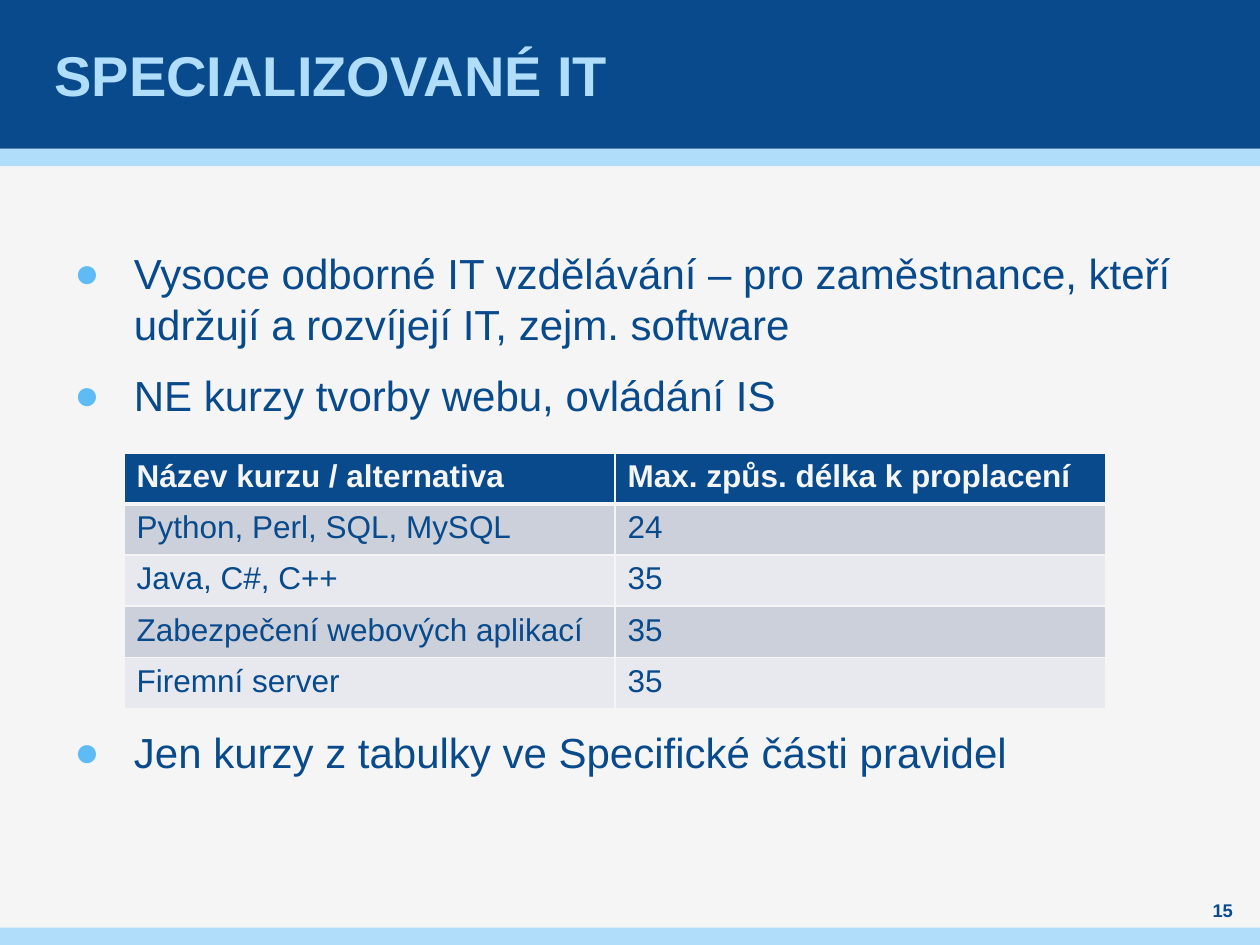
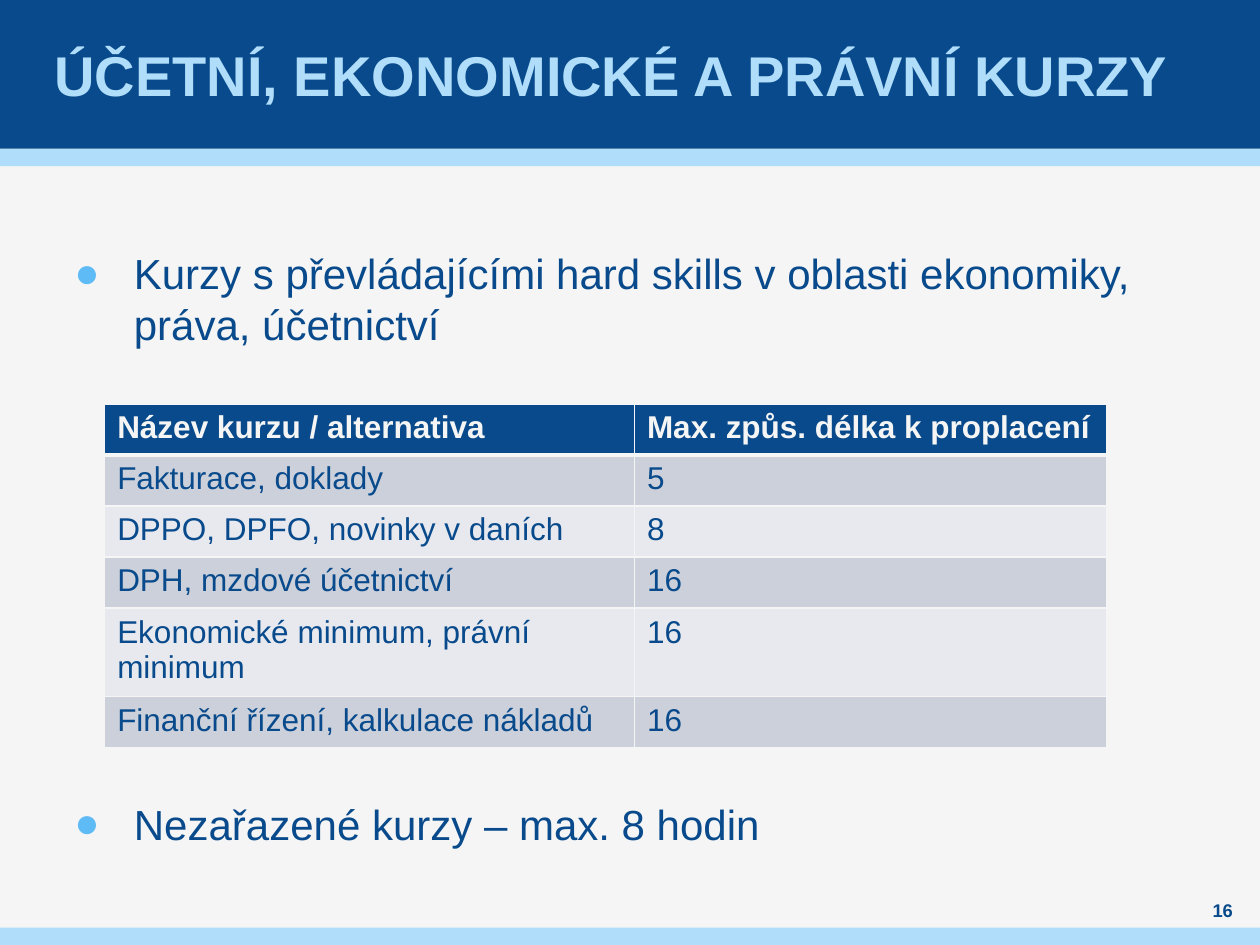
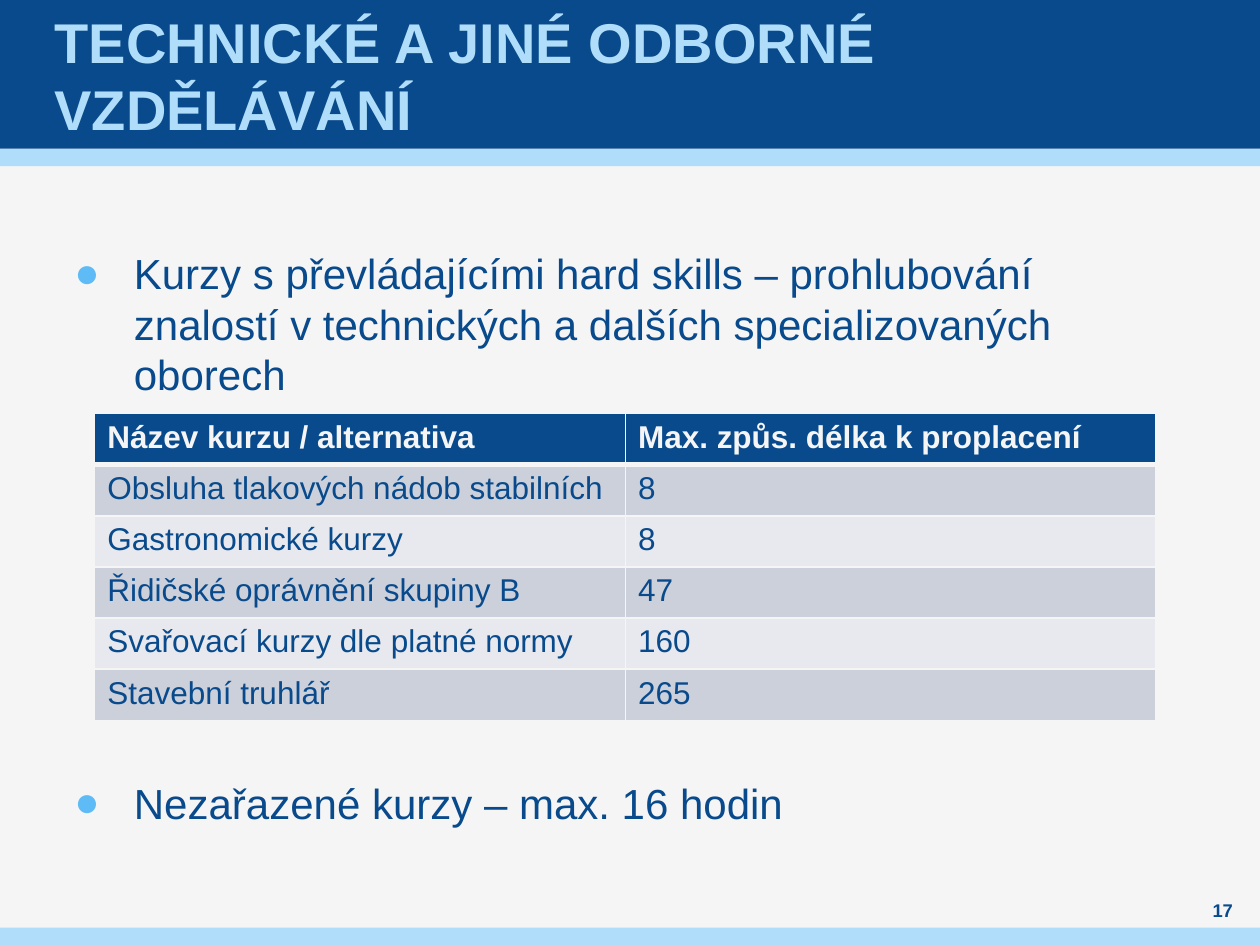
"""Builds three slides on subsidised courses, each with bullets and a table of limits."""
from dataclasses import dataclass
from typing import NamedTuple

from lxml import etree
from pptx import Presentation
from pptx import util as u
from pptx.dml.color import RGBColor
from pptx.enum import shapes, text
from pptx.oxml import ns


@dataclass(frozen=True)
class Theme:
    navy: str = "084A8B"
    sky: str = "AFDDFA"
    bullet: str = "5FBBF5"
    paper: str = "F5F5F5"
    stripes: tuple[str, str] = ("CCD0DA", "E7E9EE")
    font: str = "Arial"
    title_size: float = 32
    body_size: float = 24
    table_size: float = 18
    number_size: float = 10.5
    line_spacing: float = 28.8
    space: float = 6
    thin: float = 1
    thick: float = 3


class Box(NamedTuple):
    left: float
    top: float
    width: float
    height: float

    def lengths(self) -> list[u.Cm]:
        return [u.Cm(side) for side in self]


class Band(NamedTuple):
    box: Box
    color: str


@dataclass(frozen=True)
class Limits:
    left: float
    top: float
    columns: tuple[float, float]
    courses: tuple[tuple[str, str], ...]


@dataclass(frozen=True)
class CoursePage:
    number: int
    title: str
    intro: tuple[str, ...]
    limits: Limits
    closing: str
    lines_between: int


THEME = Theme()
PAGE_WIDTH, PAGE_HEIGHT = 25.4, 19.05
HEADER, STRIP = 3.0, 0.35
ROW_HEIGHT = 1.03
INDENT = 1.2
TITLE_BOX = Box(1, 0, 23.4, HEADER)
BODY_BOX = Box(1.5, 5, 22.4, 12)
NUMBER_BOX = Box(24, 18.1, 1.3, 0.5)
BANDS = (
    Band(Box(0, HEADER, PAGE_WIDTH, STRIP), THEME.sky),
    Band(Box(0, 0, PAGE_WIDTH, HEADER), THEME.navy),
    Band(Box(0, PAGE_HEIGHT - STRIP, PAGE_WIDTH, STRIP), THEME.sky),
)
HEADINGS = ("Název kurzu / alternativa", "Max. způs. délka k proplacení")

PAGES = (
    CoursePage(
        15,
        "SPECIALIZOVANÉ IT",
        (
            "Vysoce odborné IT vzdělávání – pro zaměstnance, kteří udržují a rozvíjejí IT, zejm. software",
            "NE kurzy tvorby webu, ovládání IS",
        ),
        Limits(2.5, 9.13, (9.9, 9.9), (
            ("Python, Perl, SQL, MySQL", "24"),
            ("Java, C#, C++", "35"),
            ("Zabezpečení webových aplikací", "35"),
            ("Firemní server", "35"),
        )),
        "Jen kurzy z tabulky ve Specifické části pravidel",
        4,
    ),
    CoursePage(
        16,
        "ÚČETNÍ, EKONOMICKÉ A PRÁVNÍ KURZY",
        ("Kurzy s převládajícími hard skills v oblasti ekonomiky, práva, účetnictví",),
        Limits(2.11, 8.14, (10.68, 9.52), (
            ("Fakturace, doklady", "5"),
            ("DPPO, DPFO, novinky v daních", "8"),
            ("DPH, mzdové účetnictví", "16"),
            ("Ekonomické minimum, právní minimum", "16"),
            ("Finanční řízení, kalkulace nákladů", "16"),
        )),
        "Nezařazené kurzy – max. 8 hodin",
        6,
    ),
    CoursePage(
        17,
        "TECHNICKÉ A JINÉ ODBORNÉ VZDĚLÁVÁNÍ",
        ("Kurzy s převládajícími hard skills – prohlubování znalostí v technických a dalších specializovaných oborech",),
        Limits(1.91, 8.34, (10.7, 10.7), (
            ("Obsluha tlakových nádob stabilních", "8"),
            ("Gastronomické kurzy", "8"),
            ("Řidičské oprávnění skupiny B", "47"),
            ("Svařovací kurzy dle platné normy", "160"),
            ("Stavební truhlář", "265"),
        )),
        "Nezařazené kurzy – max. 16 hodin",
        5,
    ),
)


def rgb(color: str) -> RGBColor:
    return RGBColor.from_string(color)


def add_child(parent, tag: str, **attributes: str):
    return etree.SubElement(parent, ns.qn(tag), attributes)


def style(paragraph, size: float, color: str, bold: bool = False) -> None:
    font = paragraph.font
    font.name, font.size, font.bold = THEME.font, u.Pt(size), bold
    font.color.rgb = rgb(color)


def add_frame(slide, box: Box, side_inset: float = 0, anchor=text.MSO_ANCHOR.MIDDLE):
    frame = slide.shapes.add_textbox(*box.lengths()).text_frame
    frame.word_wrap = True
    frame.vertical_anchor = anchor
    frame.margin_top = frame.margin_bottom = 0
    frame.margin_left = frame.margin_right = u.Cm(side_inset)
    return frame


def add_band(slide, band: Band) -> None:
    strip = slide.shapes.add_shape(shapes.MSO_SHAPE.RECTANGLE, *band.box.lengths())
    strip.shadow.inherit = False
    strip.fill.solid()
    strip.fill.fore_color.rgb = rgb(band.color)
    strip.line.fill.background()


def add_title(slide, title: str) -> None:
    heading = add_frame(slide, TITLE_BOX, side_inset=0.1).paragraphs[0]
    heading.text = title
    style(heading, THEME.title_size, THEME.sky, bold=True)


def add_number(slide, number: int) -> None:
    label = add_frame(slide, NUMBER_BOX).paragraphs[0]
    label.text = str(number)
    label.alignment = text.PP_ALIGN.CENTER
    style(label, THEME.number_size, THEME.navy, bold=True)


def write_bullet(paragraph, wording: str, space_before: float) -> None:
    paragraph.text = wording
    properties = paragraph._p.get_or_add_pPr()
    properties.set("marL", str(u.Cm(INDENT)))
    properties.set("indent", str(-u.Cm(INDENT)))
    add_child(add_child(properties, "a:buClr"), "a:srgbClr", val=THEME.bullet)
    add_child(properties, "a:buFont", typeface=THEME.font)
    add_child(properties, "a:buChar", char="●")
    paragraph.line_spacing = u.Pt(THEME.line_spacing)
    paragraph.space_before = u.Pt(space_before)
    paragraph.space_after = u.Pt(THEME.space)
    style(paragraph, THEME.body_size, THEME.navy)


def add_body(slide, page: CoursePage) -> None:
    frame = add_frame(slide, BODY_BOX, anchor=text.MSO_ANCHOR.TOP)
    for index, point in enumerate(page.intro):
        paragraph = frame.add_paragraph() if index else frame.paragraphs[0]
        write_bullet(paragraph, point, THEME.space if index else 0)
    line = THEME.line_spacing + 2 * THEME.space
    write_bullet(frame.add_paragraph(), page.closing, THEME.space + page.lines_between * line)


def set_borders(cell, top: float, bottom: float) -> None:
    properties = cell._tc.get_or_add_tcPr()
    widths = {"a:lnL": THEME.thin, "a:lnR": THEME.thin, "a:lnT": top, "a:lnB": bottom}
    for side, width in widths.items():
        border = add_child(properties, side, w=str(u.Pt(width)))
        add_child(add_child(border, "a:solidFill"), "a:srgbClr", val=THEME.paper)


def fill_cell(cell, wording: str, row: int) -> None:
    is_heading = row == 0
    set_borders(
        cell,
        top=THEME.thick if row == 1 else THEME.thin,
        bottom=THEME.thick if is_heading else THEME.thin,
    )
    cell.fill.solid()
    cell.fill.fore_color.rgb = rgb(THEME.navy if is_heading else THEME.stripes[(row - 1) % 2])
    cell.text = wording
    style(
        cell.text_frame.paragraphs[0],
        THEME.table_size,
        THEME.paper if is_heading else THEME.navy,
        bold=is_heading,
    )


def add_limits(slide, limits: Limits) -> None:
    rows = (HEADINGS, *limits.courses)
    box = Box(limits.left, limits.top, sum(limits.columns), ROW_HEIGHT * len(rows))
    table = slide.shapes.add_table(len(rows), len(HEADINGS), *box.lengths()).table
    for column, width in zip(table.columns, limits.columns):
        column.width = u.Cm(width)
    for row, wordings in enumerate(rows):
        table.rows[row].height = u.Cm(ROW_HEIGHT)
        for column, wording in enumerate(wordings):
            fill_cell(table.cell(row, column), wording, row)


def add_page(deck, page: CoursePage) -> None:
    slide = deck.slides.add_slide(deck.slide_layouts[6])
    for band in BANDS:
        add_band(slide, band)
    add_title(slide, page.title)
    add_body(slide, page)
    add_number(slide, page.number)
    add_limits(slide, page.limits)


def main() -> None:
    deck = Presentation()
    deck.slide_width, deck.slide_height = u.Cm(PAGE_WIDTH), u.Cm(PAGE_HEIGHT)
    backdrop = deck.slide_master.background.fill
    backdrop.solid()
    backdrop.fore_color.rgb = rgb(THEME.paper)
    for page in PAGES:
        add_page(deck, page)
    deck.save("out.pptx")


if __name__ == "__main__":
    main()
